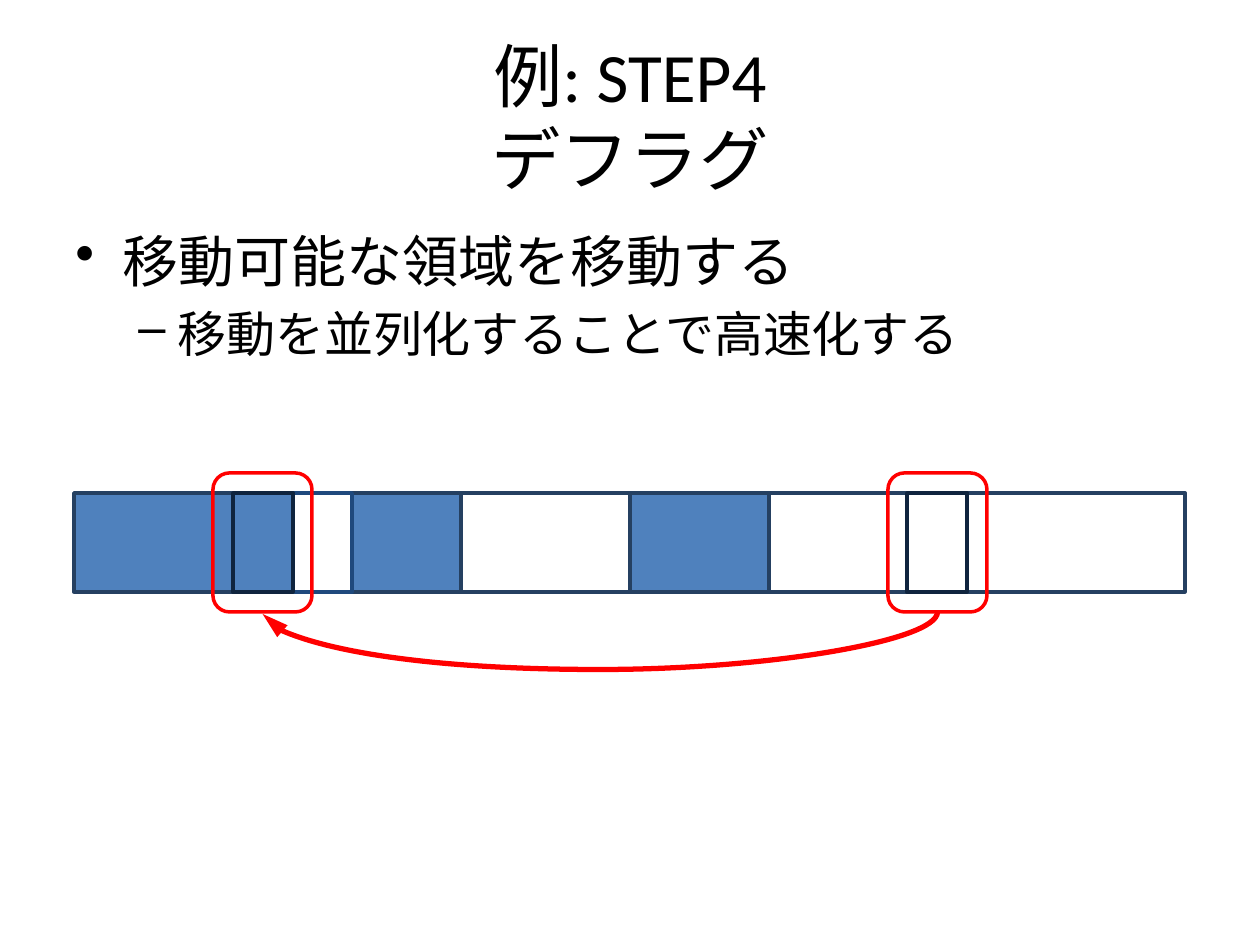
import pptx
import pptx.util
import pptx.dml.color
import pptx.enum.shapes
import pptx.enum.text
import pptx.oxml
import pptx.oxml.ns
from dataclasses import dataclass


@dataclass(frozen=True)
class Theme:
    font: str = "Calibri"
    title: float = 39.6
    body: tuple = (32, 28)
    text: str = "000000"
    used: str = "4F81BD"
    free: str = "FFFFFF"
    edge: str = "254061"
    dark: str = "0F243E"
    navy: str = "1F497D"
    mark: str = "FF0000"
    line: int = 2
    arrow: int = 3


THEME = Theme()
TITLE = "例: STEP4\vデフラグ"
# text, bullet, left margin px, hanging indent px
POINTS = [
    ("移動可能な領域を移動する", "•", 47, 47),
    ("移動を並列化することで高速化する", "–", 102, 39),
]

# Memory bar: cell borders, then (cell index, fill, outline) from back to front
EDGES = [74, 233, 293, 352, 461, 630, 769, 907, 967, 1185]
CELLS = [
    (0, THEME.used, THEME.edge),
    (3, THEME.used, THEME.edge),
    (4, THEME.free, THEME.edge),
    (5, THEME.used, THEME.edge),
    (6, THEME.free, THEME.edge),
    (8, THEME.free, THEME.edge),
    (7, THEME.free, THEME.dark),
    (2, THEME.free, THEME.navy),
    (1, THEME.used, THEME.dark),
]
BAR_TOP, BAR_H = 493, 99
SOURCE, TARGET = 888, 213
FRAME_TOP, FRAME_W, FRAME_H = 473, 99, 139
SAG = 58

KIND = pptx.enum.shapes.MSO_SHAPE


def px(n):
    return round(n * 914400 / 126)


def rgb(code):
    return pptx.dml.color.RGBColor.from_string(code)


def xml(tag, attrs=""):
    space = pptx.oxml.ns.nsdecls("a")
    return pptx.oxml.parse_xml(f"<a:{tag} {space} {attrs}/>")


def style(para, size):
    para.font.name = THEME.font
    para.font.size = pptx.util.Pt(size)
    para.font.color.rgb = rgb(THEME.text)


def add_text(slide, *rect):
    frame = slide.shapes.add_textbox(*map(px, rect)).text_frame
    frame.word_wrap = True
    return frame


def add_box(slide, kind, rect, fill, line):
    box = slide.shapes.add_shape(kind, *map(px, rect))
    box.shadow.inherit = False
    if fill:
        box.fill.solid()
        box.fill.fore_color.rgb = rgb(fill)
    else:
        box.fill.background()
    box.line.color.rgb = rgb(line)
    box.line.width = pptx.util.Pt(THEME.line)
    return box


def add_arc(slide, start, end):
    """Curved arrow that hangs below two frames, from start to end."""
    wire = slide.shapes.add_connector(
        pptx.enum.shapes.MSO_CONNECTOR.CURVE, 0, 0, 0, 0)
    wire.begin_connect(start, 2)
    wire.end_connect(end, 2)
    wire.line.color.rgb = rgb(THEME.mark)
    wire.line.width = pptx.util.Pt(THEME.arrow)
    tip = xml("tailEnd", 'type="triangle" w="med" len="lg"')
    wire.line._get_or_add_ln().append(tip)

    # The preset runs sideways, so it is turned by 90 degrees about its centre.
    thin, span = px(2), start.left - end.left
    mid = end.left + end.width // 2 + span // 2
    low = end.top + end.height + thin // 2
    props = wire._element.spPr
    frame = props.xfrm
    for flip in ("flipH", "flipV"):
        frame.attrib.pop(flip, None)
    frame.set("rot", str(90 * 60000))
    wire.left, wire.top = mid - thin // 2, low - span // 2
    wire.width, wire.height = thin, span
    bend = round(px(SAG) / thin * 100000)
    guides = props.prstGeom.get_or_add_avLst()
    guides.append(xml("gd", f'name="adj1" fmla="val {bend}"'))
    props.append(xml("effectLst"))


def main():
    deck = pptx.Presentation()
    deck.slide_width, deck.slide_height = px(1260), px(945)
    slide = deck.slides.add_slide(deck.slide_layouts[6])

    head = add_text(slide, 63, 38, 1134, 157)
    head.vertical_anchor = pptx.enum.text.MSO_ANCHOR.MIDDLE
    para = head.paragraphs[0]
    para.text = TITLE
    para.alignment = pptx.enum.text.PP_ALIGN.CENTER
    style(para, THEME.title)

    body = add_text(slide, 63, 220, 1134, 203)
    for level, (text, mark, left, hang) in enumerate(POINTS):
        para = body.add_paragraph() if level else body.paragraphs[0]
        para.text, para.level = text, level
        size = THEME.body[level]
        style(para, size)
        para.space_before = pptx.util.Pt(size * 0.2)
        props = para._p.get_or_add_pPr()
        props.set("marL", str(px(left)))
        props.set("indent", str(-px(hang)))
        bullet = xml("buChar", f'char="{mark}"')
        props.insert_element_before(bullet, "a:tabLst", "a:defRPr", "a:extLst")

    for i, fill, line in CELLS:
        rect = (EDGES[i], BAR_TOP, EDGES[i + 1] - EDGES[i], BAR_H)
        add_box(slide, KIND.RECTANGLE, rect, fill, line)

    start, end = [
        add_box(slide, KIND.ROUNDED_RECTANGLE,
                (x, FRAME_TOP, FRAME_W, FRAME_H), None, THEME.mark)
        for x in (SOURCE, TARGET)
    ]
    add_arc(slide, start, end)
    deck.save("out.pptx")


if __name__ == "__main__":
    main()
